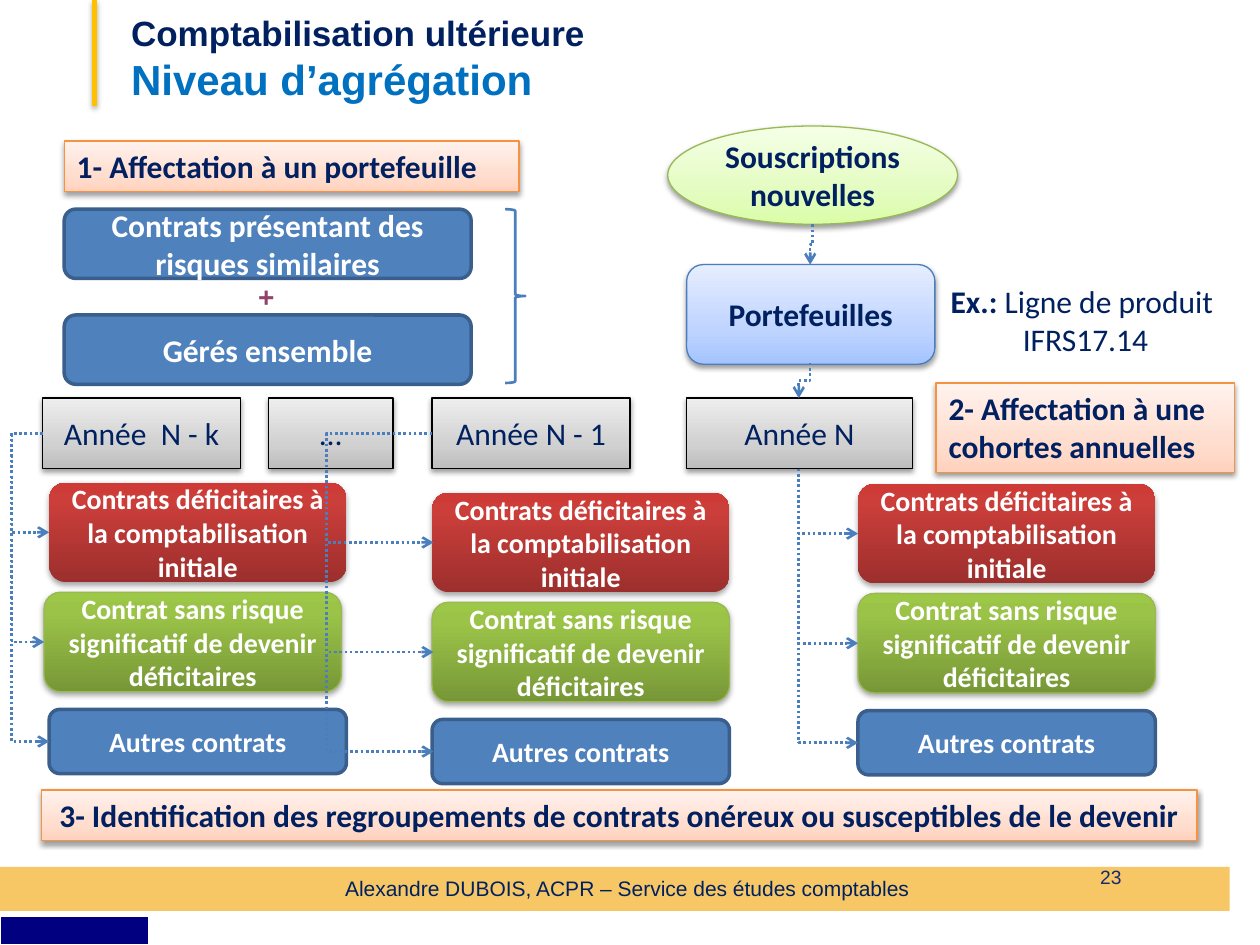
from copy import deepcopy
from dataclasses import dataclass

from lxml.etree import SubElement
from pptx import Presentation
from pptx.dml.color import RGBColor
from pptx.enum.dml import MSO_LINE
from pptx.enum.shapes import MSO_CONNECTOR as Connector, MSO_SHAPE as Preset
from pptx.enum.text import MSO_ANCHOR as Anchor, MSO_AUTO_SIZE as AutoSize, PP_ALIGN as Align
from pptx.oxml.ns import qn
from pptx.util import Inches, Pt

WIDTH, HEIGHT = 10, 7.5
COLUMNS, ROWS = 100, 75


@dataclass(frozen=True)
class Style:
    """Look of one kind of box."""
    fill: object
    border: str = None
    border_width: float = 0.75
    shadow: int = 38
    color: str = "002060"
    bold: bool = True
    size: int = 18


class Theme:
    """Colours, fonts and type sizes of the slide."""
    heading, body = "Arial", "Calibri"
    navy, sky, plum, page = "002060", "0070C0", "8F4369", "162A71"
    band, corner, accent, link = "F7C765", "000080", "FFC000", "4B7EBC"
    title, subtitle, text, plus, footer, number = 20, 24, 18, 16, 12, 11
    step = Style(((0, "FFD2BD"), (0.35, "FFDED0"), (1, "FFF2ED")), "F69240")
    year = Style(((0, "BDBDBD"), (0.35, "D1D1D1"), (1, "EEEEEE")), "000000", bold=False)
    portfolio = Style(((0, "A4C4FF"), (0.35, "BFD4FF"), (1, "E6EEFF")), "4B7EBC")
    source = Style(((0, "DAFDA7"), (0.35, "E4FCC2"), (1, "F5FFE7")), "98B955")
    criterion = Style("4F81BD", "3A5F8C", 2, 0, "FFFFFF")
    loss = Style(((0, "9C2F2D"), (0.8, "CB3E3A"), (1, "CE3B37")), None, 0, 35, "FFFFFF", size=16)
    safe = Style(((0, "779737"), (0.8, "9BC348"), (1, "9DC746")), "98B955", 0.75, 35, "FFFFFF", size=16)
    other = Style("4F81BD", "3A5F8C", 2, 0, "FFFFFF", size=16)


def across(columns):
    """Turn grid columns into a length."""
    return Inches(WIDTH * columns / COLUMNS)


def down(rows):
    """Turn grid rows into a length."""
    return Inches(HEIGHT * rows / ROWS)


def area(column, row, columns, rows):
    """Turn a grid area into left, top, width and height."""
    return across(column), down(row), across(columns), down(rows)


def rgb(value):
    """Turn a hex value into a colour."""
    return RGBColor.from_string(value)


def set_font(font, name, size, color, bold=False):
    """Set the four font properties."""
    font.name, font.size, font.bold = name, Pt(size), bold
    font.color.rgb = rgb(color)


def write(frame, lines, name, size, color, bold=False, align=Align.LEFT, anchor=Anchor.TOP):
    """Write lines as paragraphs of one style."""
    frame.word_wrap, frame.vertical_anchor = True, anchor
    frame.text = "\n".join(lines)
    for paragraph in frame.paragraphs:
        paragraph.alignment = align
        set_font(paragraph.font, name, size, color, bold)


def add_effects(properties, opacity=0):
    """Replace the effects by a soft shadow, or by none."""
    effects = properties.find(qn("a:effectLst"))
    if effects is None:
        effects = SubElement(properties, qn("a:effectLst"))
    if opacity:
        shadow = SubElement(effects, qn("a:outerShdw"), blurRad="40000", dist="20000", dir="5400000", rotWithShape="0")
        color = SubElement(shadow, qn("a:srgbClr"), val="000000")
        SubElement(color, qn("a:alpha"), val=str(opacity * 1000))


def paint(shape, fill):
    """Fill a shape with a colour or an upward gradient."""
    if isinstance(fill, str):
        shape.fill.solid()
        shape.fill.fore_color.rgb = rgb(fill)
        return
    shape.fill.gradient()
    shape.fill.gradient_angle = 90
    stops = shape._element.spPr.find(".//" + qn("a:gsLst"))
    stops.append(deepcopy(stops[0]))
    for stop, (position, color) in zip(shape.fill.gradient_stops, fill):
        stop.position = position
        stop.color.rgb = rgb(color)


def add_box(slide, preset, place, style, text="", align=Align.CENTER, anchor=Anchor.MIDDLE):
    """Add a styled box with its label."""
    shape = slide.shapes.add_shape(preset, *area(*place))
    shape.shadow.inherit = False
    paint(shape, style.fill)
    if style.border:
        shape.line.color.rgb = rgb(style.border)
        shape.line.width = Pt(style.border_width)
    else:
        shape.line.fill.background()
    add_effects(shape._element.spPr, style.shadow)
    if text:
        write(shape.text_frame, [text], Theme.body, style.size, style.color, style.bold, align, anchor)


def add_text(slide, place, lines, *look, **options):
    """Add a text box and return its frame."""
    frame = slide.shapes.add_textbox(*area(*place)).text_frame
    write(frame, lines, *look, **options)
    return frame


def add_elbow(slide, start, end, bend, turned=False):
    """Add a dotted elbow arrow, turned to leave downwards if asked."""
    (x1, y1), (x2, y2) = start, end
    if turned:
        x, y, run, rise = (x1 + x2) / 2, (y1 + y2) / 2, (y2 - y1) / 2, (x1 - x2) / 2
        x1, y1, x2, y2 = x - run, y - rise, x + run, y + rise
    arrow = slide.shapes.add_connector(Connector.ELBOW, across(x1), down(y1), across(x2), down(y2))
    arrow.line.color.rgb = rgb(Theme.link)
    arrow.line.width = Pt(1.5)
    arrow.line.dash_style = MSO_LINE.ROUND_DOT
    properties = arrow._element.spPr
    SubElement(properties.find(qn("a:ln")), qn("a:tailEnd"), type="arrow")
    if turned:
        properties.find(qn("a:xfrm")).set("rot", "5400000")
    guides = properties.find(qn("a:prstGeom")).get_or_add_avLst()
    SubElement(guides, qn("a:gd"), name="adj1", fmla=f"val {round(bend * 100000)}")
    add_effects(properties)


def add_cohort(slide, lefts, top, start, trunk):
    """Add the three contract groups of a year and their arrows."""
    groups = (
        (0, 7.9, Theme.loss, "Contrats déficitaires à la comptabilisation initiale"),
        (8.7, 7.9, Theme.safe, "Contrat sans risque significatif de devenir déficitaires"),
        (18, 5.1, Theme.other, "Autres contrats"),
    )
    for left, (offset, height, style, text) in zip(lefts, groups):
        add_box(slide, Preset.ROUNDED_RECTANGLE, (left, top + offset, 23.6, height), style, text)
        end = max(left, start[0] + 0.1)
        add_elbow(slide, start, (end, top + offset + height / 2), (trunk - start[0]) / (end - start[0]))


def add_frame(slide):
    """Add the title, the footer band and the marks at the edges."""
    add_box(slide, Preset.RECTANGLE, (0, 68.8, 97.6, 3.5), Style(Theme.band, shadow=0))
    add_text(slide, (26.4, 69, 47.2, 5.5), ["Alexandre DUBOIS, ACPR – Service des études comptables"],
             Theme.heading, Theme.footer, Theme.navy)
    add_text(slide, (78.3, 68.2, 11.7, 3.2), ["23"], Theme.heading, Theme.number, Theme.page, align=Align.RIGHT)
    cell = slide.shapes.add_table(1, 1, *area(0, 72.7, 11.8, 2.3)).table.cell(0, 0)
    cell.margin_top = cell.margin_bottom = 0
    cell.text_frame.paragraphs[0].font.size = Pt(8)
    paint(cell, Theme.corner)
    rule = slide.shapes.add_connector(Connector.STRAIGHT, across(7.5), 0, across(7.5), down(8.4))
    rule.line.color.rgb = rgb(Theme.accent)
    rule.line.width = Pt(3)
    add_effects(rule._element.spPr, 35)
    title = slide.shapes.title
    title.left, title.top, title.width, title.height = area(9.4, 0, 92.5, 9.2)
    frame = title.text_frame
    write(frame, ["Comptabilisation ultérieure", "Niveau d’agrégation"],
          Theme.heading, Theme.title, Theme.navy, True, anchor=Anchor.MIDDLE)
    frame.auto_size = AutoSize.NONE
    set_font(frame.paragraphs[1].font, Theme.heading, Theme.subtitle, Theme.sky, True)


def add_portfolio(slide):
    """Add the portfolio criteria and the flow of new business."""
    for row, text in ((16.6, "Contrats présentant des risques similaires"), (25, "Gérés ensemble")):
        add_box(slide, Preset.ROUNDED_RECTANGLE, (5.1, row, 32.3, 5.5), Theme.criterion, text)
    add_text(slide, (19.5, 21.7, 3.5, 3.7), ["+"], Theme.heading, Theme.plus, Theme.plum, True)
    brace = slide.shapes.add_shape(Preset.RIGHT_BRACE, *area(40.1, 16.6, 1.6, 13.8))
    brace.shadow.inherit = False
    brace.fill.background()
    brace.line.color.rgb = rgb(Theme.link)
    brace.line.width = Pt(1.5)
    add_box(slide, Preset.OVAL, (53, 10, 23, 7.8), Theme.source, "Souscriptions nouvelles")
    add_box(slide, Preset.ROUNDED_RECTANGLE, (54.5, 21, 19.7, 7.9), Theme.portfolio, "Portefeuilles")
    frame = add_text(slide, (74.4, 21.9, 23.5, 7.1), ["Ex.: ", "IFRS17.14"],
                     Theme.body, Theme.text, Theme.navy, align=Align.CENTER)
    example = frame.paragraphs[0]
    example.runs[0].font.bold = True
    example.add_run().text = "Ligne de produit "


def main():
    """Build the slide and save it."""
    presentation = Presentation()
    presentation.slide_width, presentation.slide_height = Inches(WIDTH), Inches(HEIGHT)
    slide = presentation.slides.add_slide(presentation.slide_layouts[5])
    add_frame(slide)
    add_portfolio(slide)
    for column, columns, text in ((3.4, 15.7, "Année  N - k"), (21.3, 9.9, "…"),
                                  (34.3, 15.7, "Année N - 1"), (54.5, 17.9, "Année N")):
        add_box(slide, Preset.RECTANGLE, (column, 31.6, columns, 5.6), Theme.year, text)
    steps = (
        ((5.1, 11.2, 36.1, 4), "1- Affectation à un portefeuille", Align.LEFT),
        ((74.3, 30.4, 23.7, 7.1), "2- Affectation à une cohortes annuelles", Align.LEFT),
        ((3.3, 62.7, 91.7, 4),
         "3- Identification des regroupements de contrats onéreux ou susceptibles de le devenir", Align.CENTER),
    )
    for place, text, align in steps:
        add_box(slide, Preset.RECTANGLE, place, Theme.step, text, align, Anchor.TOP)
    add_cohort(slide, (3.9, 3.5, 3.9), 38.3, (3.4, 34.4), 0.9)
    add_cohort(slide, (34.3,) * 3, 39.1, (34.3, 34.4), 25.8)
    add_cohort(slide, (68.1,) * 3, 38.4, (63.4, 37.2), 63.4)
    add_elbow(slide, (64.5, 17.8), (64.3, 21), 0.5, turned=True)
    add_elbow(slide, (64.3, 28.8), (63.4, 31.6), 0.5, turned=True)
    presentation.save("out.pptx")


if __name__ == "__main__":
    main()
